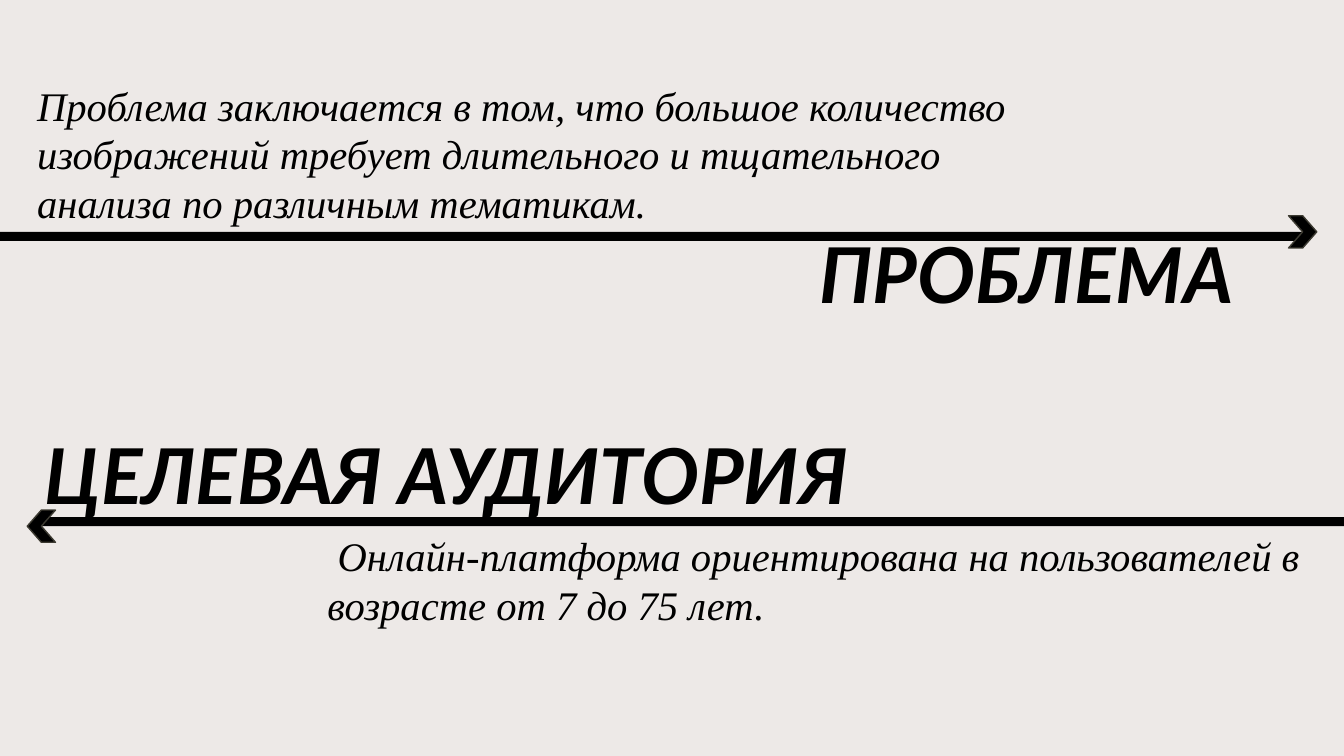
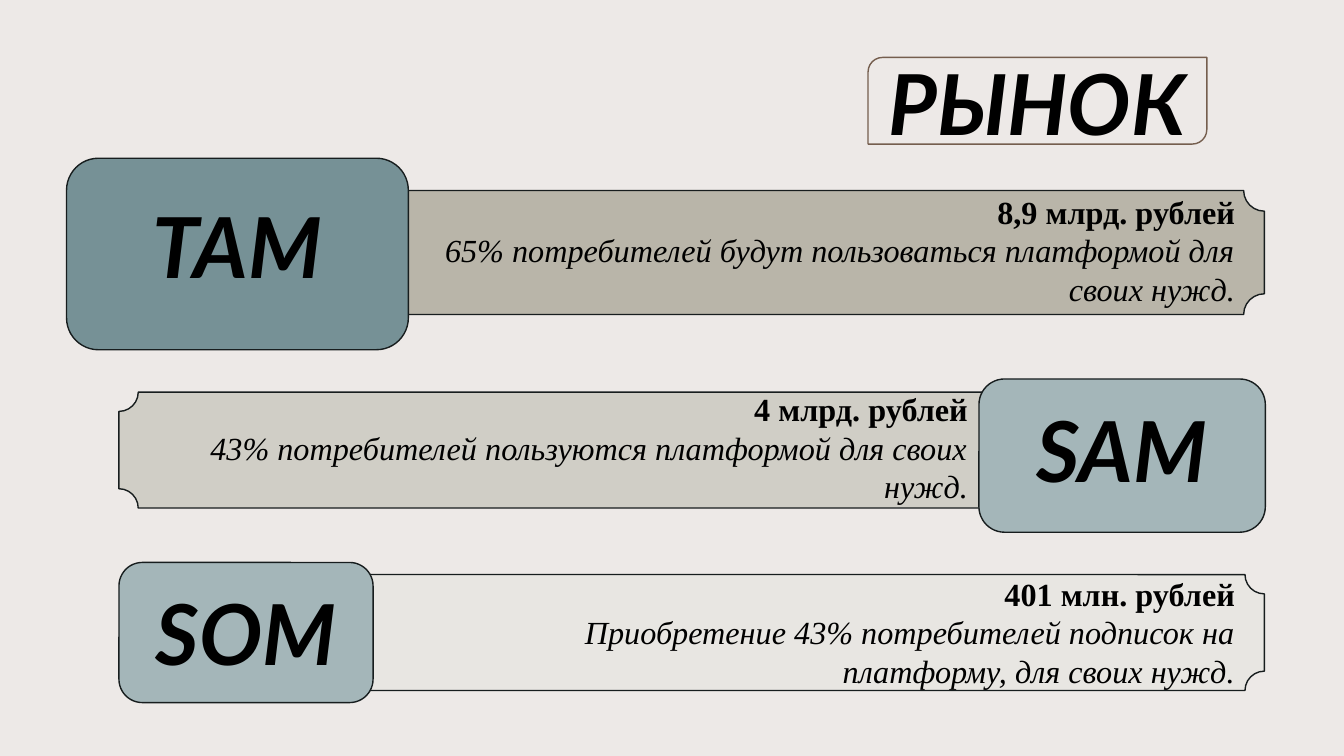
"""Build two slides: problem and audience, then market size."""
from dataclasses import dataclass

from pptx import Presentation
from pptx.dml.color import RGBColor
from pptx.enum.shapes import MSO_SHAPE
from pptx.enum.text import MSO_ANCHOR, MSO_AUTO_SIZE, PP_ALIGN
from pptx.presentation import Presentation as Deck
from pptx.shapes.autoshape import Shape
from pptx.slide import Slide
from pptx.util import Inches, Pt

SLIDE_WIDTH, SLIDE_HEIGHT = 13.33, 7.5
BACKGROUND, INK = "EDE9E7", "000000"
ARROW_EDGE, CARD_EDGE, TITLE_EDGE = "3C3A31", "171D1E", "755E4E"
HEADING = dict(font="Lato", bold=True, align=PP_ALIGN.CENTER,
               anchor=MSO_ANCHOR.BOTTOM, spacing=0.9)

Box = tuple[float, float, float, float]


@dataclass(frozen=True)
class Market:
    """One market level: its card, its band and its figures."""
    label: str
    card: Box
    card_color: str
    label_lift: float
    band: Box
    band_color: str
    figures: Box
    amount: str
    details: tuple[str, ...]


MARKETS = (
    Market("TAM", (0.66, 1.57, 3.39, 1.9), "769196", 0.43,
           (2.84, 1.89, 9.7, 1.23), "B9B5A9", (3.7, 1.85, 8.65, 1.26),
           "8,9 млрд. рублей",
           ("65% потребителей будут пользоваться платформой для", "своих нужд.")),
    Market("SAM", (9.71, 3.76, 2.84, 1.52), "A4B6B9", 0.24,
           (1.18, 3.89, 9.7, 1.15), "D0CEC6", (1.4, 3.81, 8.3, 1.26),
           "4 млрд. рублей",
           ("43% потребителей пользуются платформой для своих нужд.",)),
    Market("SOM", (1.18, 5.58, 2.52, 1.39), "A4B6B9", 0.12,
           (2.84, 5.7, 9.7, 1.15), "E8E6E2", (4.05, 5.64, 8.3, 1.26),
           "401 млн. рублей",
           ("Приобретение 43% потребителей подписок на платформу, для своих нужд.",)),
)


def rgb(color: str) -> RGBColor:
    """Turn a hex string into a colour."""
    return RGBColor.from_string(color)


def inches(box: Box) -> list[Inches]:
    """Turn left, top, width and height into lengths."""
    return [Inches(value) for value in box]


def write(shape: Shape, *paragraphs: str, size: float, lead: str = "",
          font: str = "Times New Roman", bold: bool = False,
          align: PP_ALIGN = PP_ALIGN.LEFT, anchor: MSO_ANCHOR = MSO_ANCHOR.MIDDLE,
          spacing: float = 1.0, indent: float = 0, lift: float = 0.05) -> None:
    """Fill a shape with italic paragraphs after an optional bold upright lead."""
    frame = shape.text_frame
    frame.word_wrap = True
    frame.auto_size = MSO_AUTO_SIZE.NONE
    frame.vertical_anchor = anchor
    frame.margin_bottom = Inches(lift)
    lines = ((lead,) if lead else ()) + paragraphs
    for index, line in enumerate(lines):
        paragraph = frame.add_paragraph() if index else frame.paragraphs[0]
        paragraph.alignment = align
        paragraph.line_spacing = spacing
        if indent:
            paragraph._p.get_or_add_pPr().set("indent", str(Inches(indent)))
        is_lead = bool(lead) and index == 0
        run = paragraph.add_run()
        run.text = line
        run.font.name = font
        run.font.size = Pt(size)
        run.font.bold = bold or is_lead
        run.font.italic = not is_lead
        run.font.color.rgb = rgb(INK)


def add_text(slide: Slide, box: Box, *paragraphs: str, **text_format) -> None:
    """Add a text box with formatted paragraphs."""
    write(slide.shapes.add_textbox(*inches(box)), *paragraphs, **text_format)


def add_figure(shapes, kind: MSO_SHAPE, box: Box, fill: str = "", line: str = "") -> Shape:
    """Add a flat preset shape; an empty colour means no fill or no line."""
    figure = shapes.add_shape(kind, *inches(box))
    figure.shadow.inherit = False
    if fill:
        figure.fill.solid()
        figure.fill.fore_color.rgb = rgb(fill)
    else:
        figure.fill.background()
    if line:
        figure.line.color.rgb = rgb(line)
        figure.line.width = Pt(1)
    else:
        figure.line.fill.background()
    return figure


def add_arrow(slide: Slide, top: float, to_left: bool = False) -> None:
    """Add a long arrow that points to the right, or is turned to the left."""
    arrow = slide.shapes.add_group_shape()
    add_figure(arrow.shapes, MSO_SHAPE.RECTANGLE, (0, top + 0.16, 12.93, 0.09), INK)
    add_figure(arrow.shapes, MSO_SHAPE.CHEVRON, (12.78, top, 0.28, 0.32), INK, ARROW_EDGE)
    if to_left:
        arrow.left = Inches(SLIDE_WIDTH) - arrow.width
        arrow.rotation = 180


def add_titled_slide(deck: Deck, title: str, box: Box, size: float) -> Slide:
    """Add a slide whose title placeholder is moved and formatted."""
    slide = deck.slides.add_slide(deck.slide_layouts[5])
    heading = slide.shapes.title
    heading.left, heading.top, heading.width, heading.height = inches(box)
    write(heading, title, size=size, **HEADING)
    return slide


def build_problem(deck: Deck) -> None:
    """Build the slide on the problem and the target audience."""
    slide = add_titled_slide(deck, "ПРОБЛЕМА", (7.85, 1.98, 4.66, 1.25), 55)
    add_arrow(slide, 2.14)
    add_text(slide, (0.27, 0.74, 10.17, 1.57),
             "Проблема заключается в том, что большое количество изображений "
             "требует длительного и тщательного анализа по различным тематикам.",
             size=29)
    add_text(slide, (0.27, 3.97, 8.31, 1.25), "ЦЕЛЕВАЯ АУДИТОРИЯ", size=55, **HEADING)
    add_arrow(slide, 5.06, to_left=True)
    add_text(slide, (3.15, 5.21, 10.17, 1.08),
             "Онлайн-платформа ориентирована на пользователей в возрасте от 7 до 75 лет.",
             size=29, indent=0.1)


def build_market(deck: Deck) -> None:
    """Build the slide on the market levels."""
    slide = add_titled_slide(deck, "РЫНОК", (7.35, 0.44, 5.87, 1.13), 60)
    add_figure(slide.shapes, MSO_SHAPE.ROUND_2_DIAG_RECTANGLE,
               (8.61, 0.57, 3.36, 0.86), line=TITLE_EDGE)
    for market in MARKETS:
        add_figure(slide.shapes, MSO_SHAPE.PLAQUE, market.band, market.band_color, CARD_EDGE)
        card = add_figure(slide.shapes, MSO_SHAPE.ROUNDED_RECTANGLE, market.card,
                          market.card_color, CARD_EDGE)
        write(card, market.label, size=60, lift=market.label_lift, **HEADING)
        add_text(slide, market.figures, *market.details, lead=market.amount,
                 size=23, align=PP_ALIGN.RIGHT)


def main() -> None:
    """Build and save the presentation."""
    deck = Presentation()
    deck.slide_width, deck.slide_height = Inches(SLIDE_WIDTH), Inches(SLIDE_HEIGHT)
    backdrop = deck.slide_master.background.fill
    backdrop.solid()
    backdrop.fore_color.rgb = rgb(BACKGROUND)
    build_problem(deck)
    build_market(deck)
    deck.save("out.pptx")


if __name__ == "__main__":
    main()
